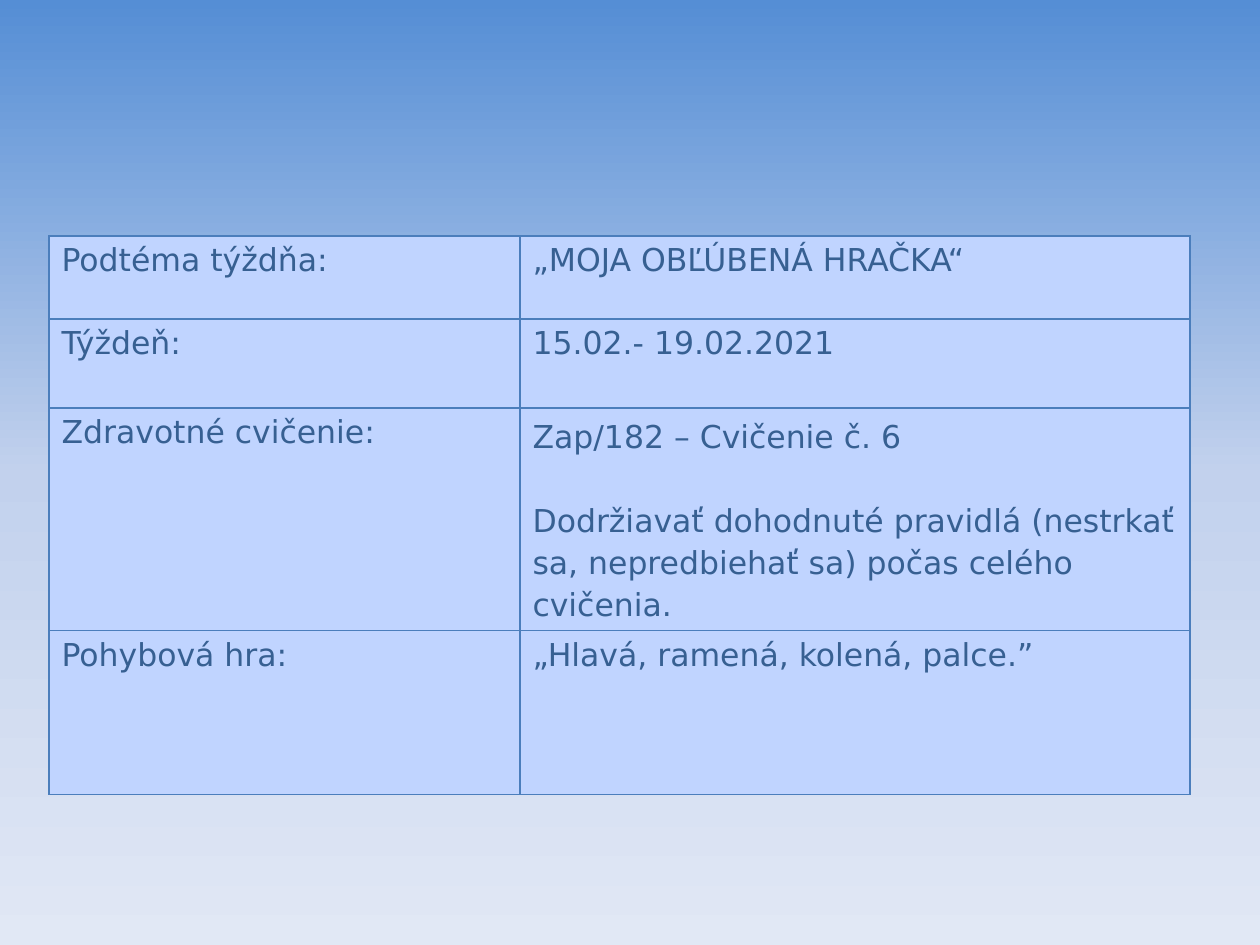
from copy import deepcopy
from dataclasses import dataclass

from lxml.etree import SubElement
from pptx import Presentation
from pptx.dml.color import RGBColor
from pptx.oxml.ns import qn
from pptx.slide import Slide
from pptx.table import _Cell
from pptx.util import Emu, Pt

PIXELS_PER_INCH = 126
FONT = "DejaVu Sans"
TEXT_COLOR = "376092"
CELL_COLOR = "C0D4FF"
BORDER_COLOR = "4B7EBC"
BACKGROUND_COLORS = ["558ED5", "C2D1ED", "E1E8F5"]
COLUMN_WIDTHS = [471, 670]


@dataclass
class PlanRow:
    label: str
    paragraphs: list[str]
    height: int
    line_spacing: float = 1.0


PLAN = [
    PlanRow("Podtéma týždňa:", ["„MOJA OBĽÚBENÁ HRAČKA“"], 83),
    PlanRow("Týždeň:", ["15.02.- 19.02.2021"], 89),
    PlanRow(
        "Zdravotné cvičenie:",
        [
            "Zap/182 – Cvičenie č. 6",
            "Dodržiavať dohodnuté pravidlá (nestrkať sa, nepredbiehať sa) počas celého cvičenia.",
        ],
        215,
        1.15,
    ),
    PlanRow("Pohybová hra:", ["„Hlavá, ramená, kolená, palce.”"], 164),
]


def px(length: int) -> Emu:
    return Emu(round(length * 914400 / PIXELS_PER_INCH))


def color(value: str) -> RGBColor:
    return RGBColor.from_string(value)


def paint_background(slide: Slide) -> None:
    fill = slide.background.fill
    fill.gradient()
    fill.gradient_angle = 270
    stop_list = slide.element.find(".//" + qn("a:gsLst"))
    stop_list.insert(1, deepcopy(stop_list[0]))
    for index, (stop, value) in enumerate(zip(fill.gradient_stops, BACKGROUND_COLORS)):
        stop.position = index / (len(BACKGROUND_COLORS) - 1)
        stop.color.rgb = color(value)


def draw_borders(cell: _Cell) -> None:
    properties = cell._tc.get_or_add_tcPr()
    for side in ("a:lnL", "a:lnR", "a:lnT", "a:lnB"):
        line = SubElement(properties, qn(side), w=str(Pt(0.75)))
        solid = SubElement(line, qn("a:solidFill"))
        SubElement(solid, qn("a:srgbClr"), val=BORDER_COLOR)


def fill_cell(cell: _Cell, texts: list[str], line_spacing: float) -> None:
    draw_borders(cell)
    cell.fill.solid()
    cell.fill.fore_color.rgb = color(CELL_COLOR)
    frame = cell.text_frame
    for index, text in enumerate(texts):
        paragraph = frame.add_paragraph() if index else frame.paragraphs[0]
        paragraph.line_spacing = line_spacing
        paragraph.space_before = Pt(24 if index else 0)
        run = paragraph.add_run()
        run.text = text
        run.font.name = FONT
        run.font.size = Pt(18)
        run.font.color.rgb = color(TEXT_COLOR)


def add_plan_table(slide: Slide, left: int, top: int) -> None:
    width = sum(COLUMN_WIDTHS)
    height = sum(row.height for row in PLAN)
    table = slide.shapes.add_table(
        len(PLAN), len(COLUMN_WIDTHS), px(left), px(top), px(width), px(height)
    ).table
    table.first_row = False
    table.horz_banding = False
    for column, column_width in zip(table.columns, COLUMN_WIDTHS):
        column.width = px(column_width)
    for table_row, row in zip(table.rows, PLAN):
        table_row.height = px(row.height)
        label_cell, content_cell = table_row.cells
        fill_cell(label_cell, [row.label], 1.0)
        fill_cell(content_cell, row.paragraphs, row.line_spacing)


def main() -> None:
    presentation = Presentation()
    presentation.slide_width = px(1260)
    presentation.slide_height = px(945)
    slide = presentation.slides.add_slide(presentation.slide_layouts[6])
    paint_background(slide)
    add_plan_table(slide, 49, 236)
    presentation.save("out.pptx")


if __name__ == "__main__":
    main()
